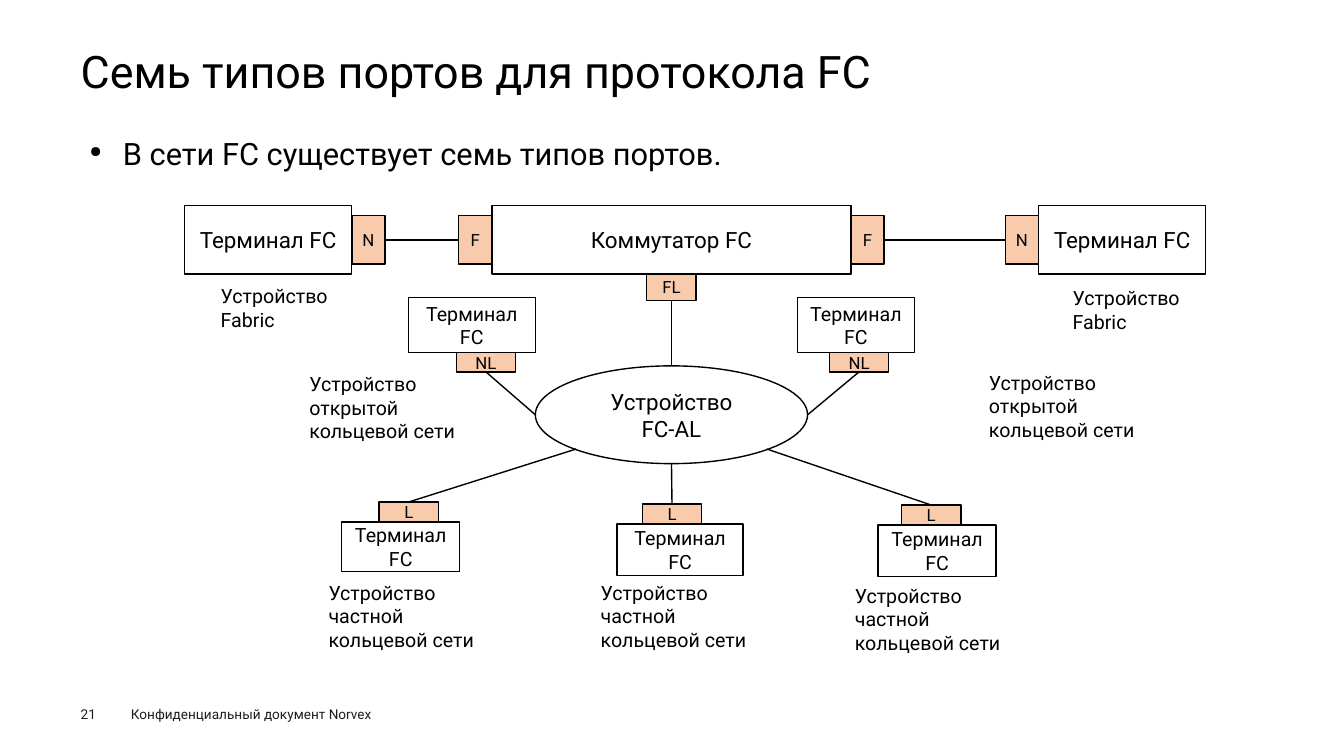
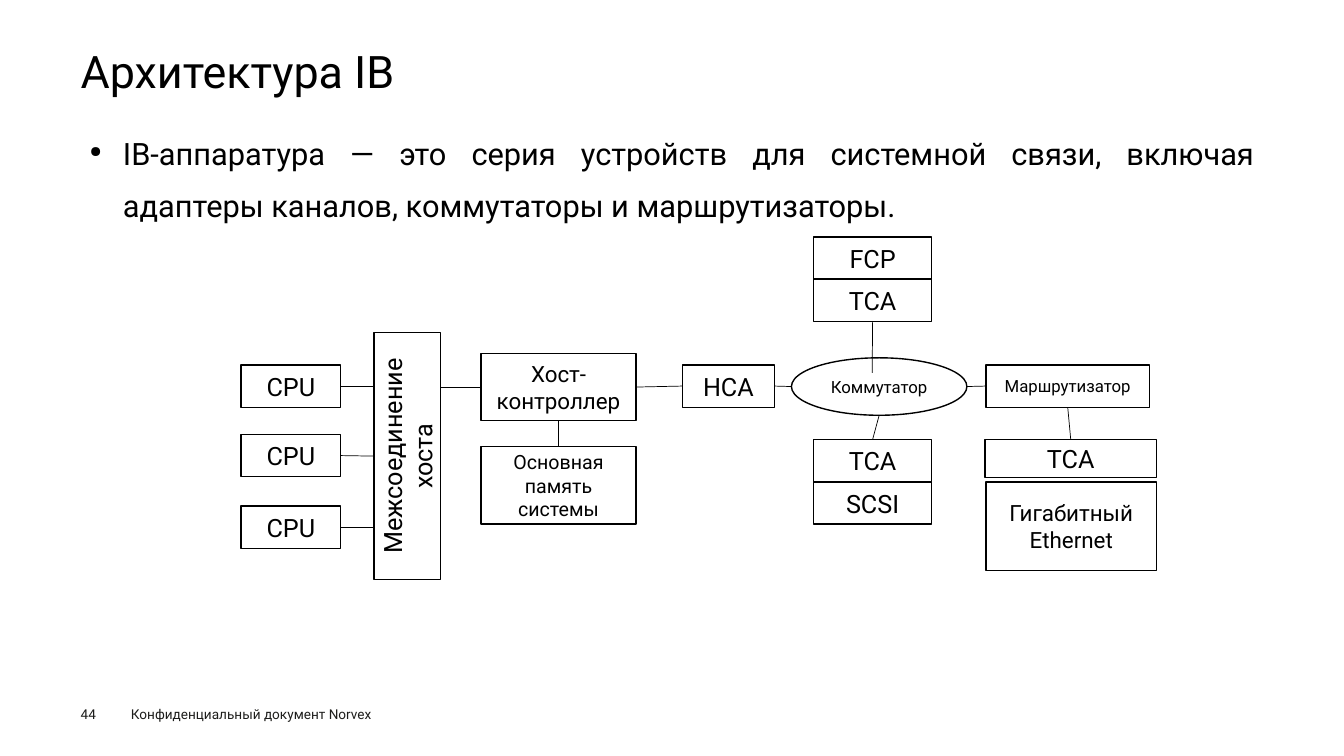
from lxml import etree
from pptx import Presentation
from pptx.dml.color import RGBColor
from pptx.enum import shapes, text
from pptx.oxml.ns import qn
from pptx.util import Inches, Pt

FONT = "Roboto"
BLACK, FOOTER_GREY, PORT_FILL = "000000", "1D1D1B", "F8CBAD"
FOOTER = "Конфиденциальный документ Norvex"
ALIGN = text.PP_ALIGN
RECT, OVAL = shapes.MSO_SHAPE.RECTANGLE, shapes.MSO_SHAPE.OVAL

# Side: share of the width, share of the height
SIDES = {"top": (0.5, 0), "left": (0, 0.5), "bottom": (0.5, 1), "right": (1, 0.5),
         "lower left": (0.15, 0.85), "lower right": (0.85, 0.85)}
SITES = ["top", "left", "bottom", "right"]

TERMINAL = "Терминал FC"
FABRIC = "Устройство Fabric"
OPEN_LOOP = "Устройство открытой кольцевой сети"
PRIVATE_LOOP = "Устройство частной кольцевой сети"

# nodes: name: (text, left, top, width, height, size)
# ports: name: (text, node, side, width, height, shift along the side)
# links: (end, end), an end being (name, side) or a point
# labels: (text, left, top, width, lines)
SLIDES = [
    dict(
        number="21",
        title="Семь типов портов для протокола FC",
        bullet="В сети FC существует семь типов портов.",
        ovals={"loop"},
        link_width=1,
        nodes={
            "switch": ("Коммутатор FC", 4.88, 2.04, 3.56, 0.68, 16),
            "fabric right": (TERMINAL, 10.3, 2.04, 1.66, 0.68, 16),
            "fabric left": (TERMINAL, 1.83, 2.04, 1.66, 0.68, 16),
            "loop": ("Устройство\nFC-AL", 5.31, 3.63, 2.7, 0.97, 16),
            "open left": (TERMINAL, 4.05, 2.95, 1.26, 0.55, 14),
            "open right": (TERMINAL, 7.91, 2.95, 1.16, 0.55, 14),
            "private left": (TERMINAL, 3.39, 5.18, 1.17, 0.49, 14),
            "private middle": (TERMINAL, 6.12, 5.2, 1.25, 0.51, 14),
            "private right": (TERMINAL, 8.71, 5.21, 1.17, 0.51, 14),
        },
        ports={
            "N left": ("N", "fabric left", "right", 0.33, 0.48, 0),
            "N right": ("N", "fabric right", "left", 0.33, 0.48, 0),
            "F left": ("F", "switch", "left", 0.33, 0.48, 0),
            "F right": ("F", "switch", "right", 0.33, 0.48, 0),
            "FL": ("FL", "switch", "bottom", 0.49, 0.26, 0),
            "NL left": ("NL", "open left", "bottom", 0.59, 0.19, 0.14),
            "NL right": ("NL", "open right", "bottom", 0.59, 0.19, 0.03),
            "L left": ("L", "private left", "top", 0.59, 0.2, 0.08),
            "L middle": ("L", "private middle", "top", 0.59, 0.2, -0.08),
            "L right": ("L", "private right", "top", 0.59, 0.2, -0.06),
        },
        links=[
            (("N left", "right"), ("F left", "left")),
            (("F right", "right"), ("N right", "left")),
            (("FL", "bottom"), ("loop", "top")),
            (("NL left", "bottom"), ("loop", "left")),
            (("NL right", "bottom"), ("loop", "right")),
            (("loop", "lower left"), ("L left", "top")),
            (("loop", "bottom"), ("L middle", "top")),
            (("loop", "lower right"), ("L right", "top")),
        ],
        labels=[
            (FABRIC, 2.09, 2.77, 1.36, 2),
            (FABRIC, 10.54, 2.79, 1.36, 2),
            (OPEN_LOOP, 2.97, 3.64, 1.71, 3),
            (OPEN_LOOP, 9.71, 3.63, 1.71, 3),
            (PRIVATE_LOOP, 3.16, 5.71, 1.85, 3),
            (PRIVATE_LOOP, 5.86, 5.71, 1.85, 3),
            (PRIVATE_LOOP, 8.38, 5.74, 1.85, 3),
        ],
    ),
    dict(
        number="44",
        title="Архитектура IB",
        bullet="IB-аппаратура — это серия устройств для системной связи, включая "
               "адаптеры каналов, коммутаторы и маршрутизаторы.",
        ovals={"switch"},
        vertical={"host bus"},
        link_width=0.5,
        nodes={
            "CPU 1": ("CPU", 2.39, 3.62, 0.99, 0.42, 18),
            "CPU 2": ("CPU", 2.39, 4.31, 0.99, 0.42, 18),
            "CPU 3": ("CPU", 2.39, 5.02, 0.99, 0.42, 18),
            "host bus": ("Межсоединение хоста", 3.71, 3.3, 0.66, 2.45, 18),
            "controller": ("Хост-контроллер", 4.77, 3.51, 1.54, 0.66, 16),
            "memory": ("Основная память системы", 4.77, 4.43, 1.54, 0.77, 14),
            "HCA": ("HCA", 6.77, 3.62, 0.91, 0.42, 18),
            "switch": ("Коммутатор", 7.85, 3.55, 1.74, 0.57, 12),
            "router": ("Маршрутизатор", 9.78, 3.62, 1.62, 0.42, 12),
            "router TCA": ("TCA", 9.77, 4.36, 1.7, 0.38, 18),
            "Ethernet": ("Гигабитный\nEthernet", 9.78, 4.78, 1.69, 0.88, 16),
            "SCSI TCA": ("TCA", 8.07, 4.36, 1.17, 0.42, 18),
            "SCSI": ("SCSI", 8.07, 4.78, 1.17, 0.42, 18),
            "FCP": ("FCP", 8.07, 2.35, 1.17, 0.42, 18),
            "FCP TCA": ("TCA", 8.07, 2.77, 1.17, 0.42, 18),
        },
        links=[
            (("CPU 1", "right"), (3.71, 3.83)),
            (("CPU 2", "right"), ("host bus", "left")),
            (("CPU 3", "right"), (3.71, 5.23)),
            ((4.37, 3.84), ("controller", "left")),
            (("controller", "bottom"), ("memory", "top")),
            (("controller", "right"), ("HCA", "left")),
            (("HCA", "right"), ("switch", "left")),
            (("switch", "right"), ("router", "left")),
            (("router", "bottom"), ("router TCA", "top")),
            (("switch", "bottom"), ("SCSI TCA", "top")),
            (("FCP TCA", "bottom"), (8.65, 3.7)),
        ],
    ),
]


def rgb(color):
    return RGBColor.from_string(color)


def write(shape, content, size, color=BLACK, inset=None, **paragraph_format):
    """Fill a shape with one paragraph per line of content."""
    tf = shape.text_frame
    tf.word_wrap = True
    if inset is not None:
        for side in ("left", "top", "right", "bottom"):
            setattr(tf, "margin_" + side, Inches(inset))
    tf.text = content
    for p in tf.paragraphs:
        for key, value in paragraph_format.items():
            setattr(p, key, value)
        for r in p.runs:
            r.font.name, r.font.size = FONT, Pt(size)
            r.font.color.rgb = rgb(color)
    return tf


def add_text(s, box, content, size, **options):
    sp = s.shapes.add_textbox(*map(Inches, box))
    return write(sp, content, size, **options)


def add_frame(s, content):
    """Title, bullet and footer, alike on every slide."""
    add_text(s, (0.8, 0.49, 11.73, 0.54), content["title"], 32, inset=0, line_spacing=0.9)
    tf = add_text(s, (0.8, 1.15, 11.73, 5.33), content["bullet"], 22,
                  alignment=ALIGN.JUSTIFY, line_spacing=1.4)
    tf.margin_left = tf.margin_right = Inches(0.09)
    tf.margin_top = tf.margin_bottom = Inches(0.04)
    pPr = tf.paragraphs[0]._p.get_or_add_pPr()
    pPr.set("marL", str(Inches(0.33)))
    pPr.set("indent", str(-Inches(0.33)))
    etree.SubElement(pPr, qn("a:buSzPct")).set("val", "50000")
    etree.SubElement(pPr, qn("a:buChar")).set("char", "●")
    add_text(s, (1.2, 6.95, 2.77, 0.26), FOOTER, 9.7, color=FOOTER_GREY)
    add_text(s, (0.8, 7, 0.55, 0.16), content["number"], 9.7, color=FOOTER_GREY, inset=0)


def add_node(s, kind, box, content, size, fill=None):
    sp = s.shapes.add_shape(kind, *map(Inches, box))
    sp.shadow.inherit = False
    if fill:
        sp.fill.solid()
        sp.fill.fore_color.rgb = rgb(fill)
    else:
        sp.fill.background()
    sp.line.color.rgb, sp.line.width = rgb(BLACK), Pt(1)
    write(sp, content, size, alignment=ALIGN.CENTER)
    return sp


def port_box(host, side, w, h, shift):
    """Box that touches the host's side from outside."""
    x, y, host_w, host_h = host
    if side in ("left", "right"):
        return (x - w if side == "left" else x + host_w), y + (host_h - h) / 2 + shift, w, h
    return x + (host_w - w) / 2 + shift, (y - h if side == "top" else y + host_h), w, h


def point(drawn, end):
    if end[0] not in drawn:
        return tuple(map(Inches, end))
    sp, (fx, fy) = drawn[end[0]], SIDES[end[1]]
    return int(sp.left + sp.width * fx), int(sp.top + sp.height * fy)


def add_link(s, drawn, start, end, width):
    line = s.shapes.add_connector(shapes.MSO_CONNECTOR.STRAIGHT,
                                  *point(drawn, start), *point(drawn, end))
    line.line.color.rgb, line.line.width = rgb(BLACK), Pt(width)
    etree.SubElement(line._element.spPr, qn("a:effectLst"))
    for (name, side), join in ((start, line.begin_connect), (end, line.end_connect)):
        if name in drawn and drawn[name].auto_shape_type == RECT:
            join(drawn[name], SITES.index(side))


def add_diagram(s, content):
    drawn, boxes = {}, {}
    for name, (label, *box, size) in content["nodes"].items():
        boxes[name] = box
        kind = OVAL if name in content["ovals"] else RECT
        drawn[name] = add_node(s, kind, box, label, size)
    for name in content.get("vertical", ()):
        drawn[name].text_frame._txBody.bodyPr.set("vert", "vert270")
    for name, (label, host, *place) in content.get("ports", {}).items():
        drawn[name] = add_node(s, RECT, port_box(boxes[host], *place), label, 12, PORT_FILL)
    for start, end in content["links"]:
        add_link(s, drawn, start, end, content["link_width"])
    for label, x, y, w, lines in content.get("labels", ()):
        add_text(s, (x, y, w, 0.1 + 0.23 * lines), label, 14)


def main():
    prs = Presentation()
    prs.slide_width, prs.slide_height = Inches(13.33), Inches(7.5)
    for content in SLIDES:
        s = prs.slides.add_slide(prs.slide_layouts[6])
        add_frame(s, content)
        add_diagram(s, content)
    prs.save("out.pptx")


if __name__ == "__main__":
    main()
